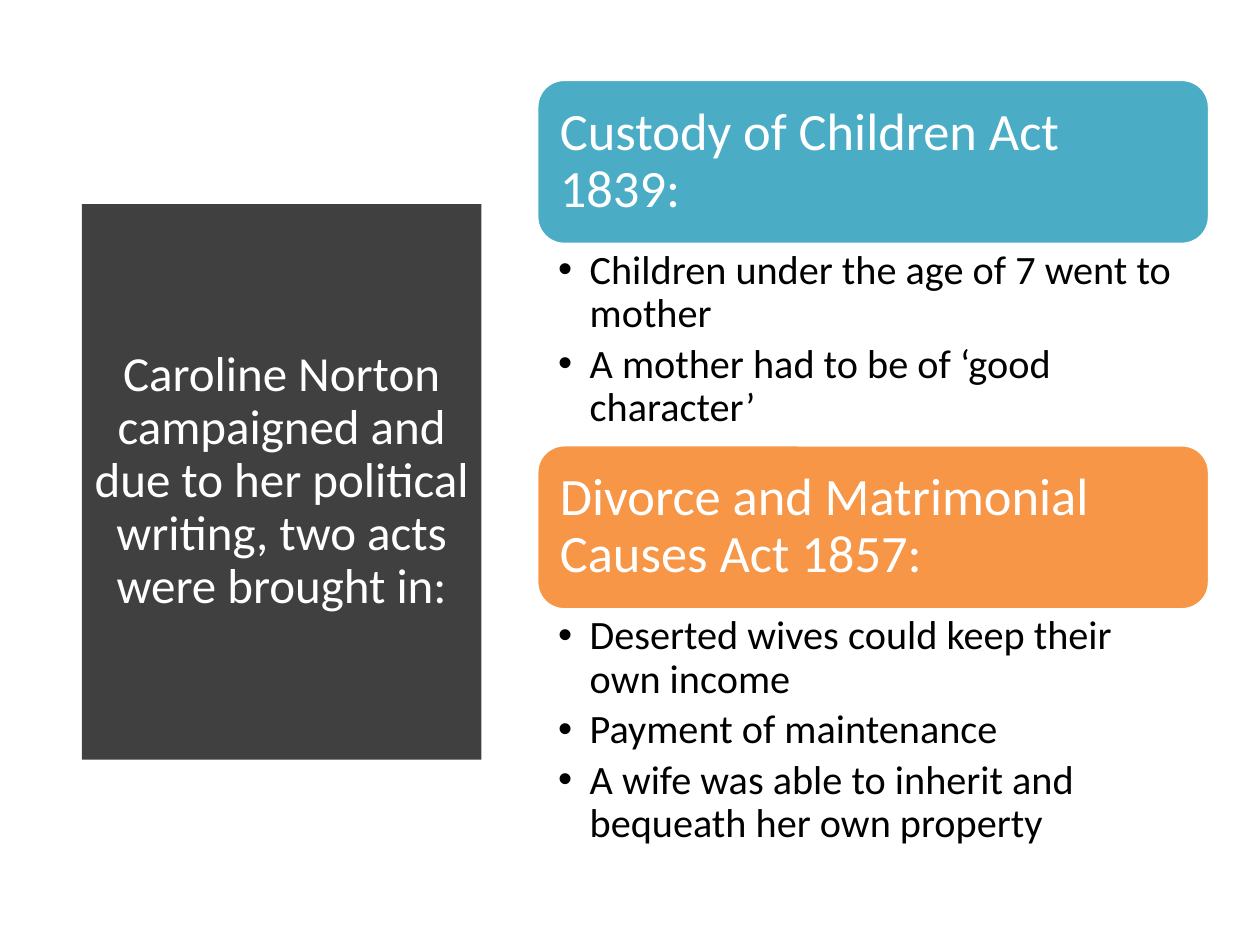
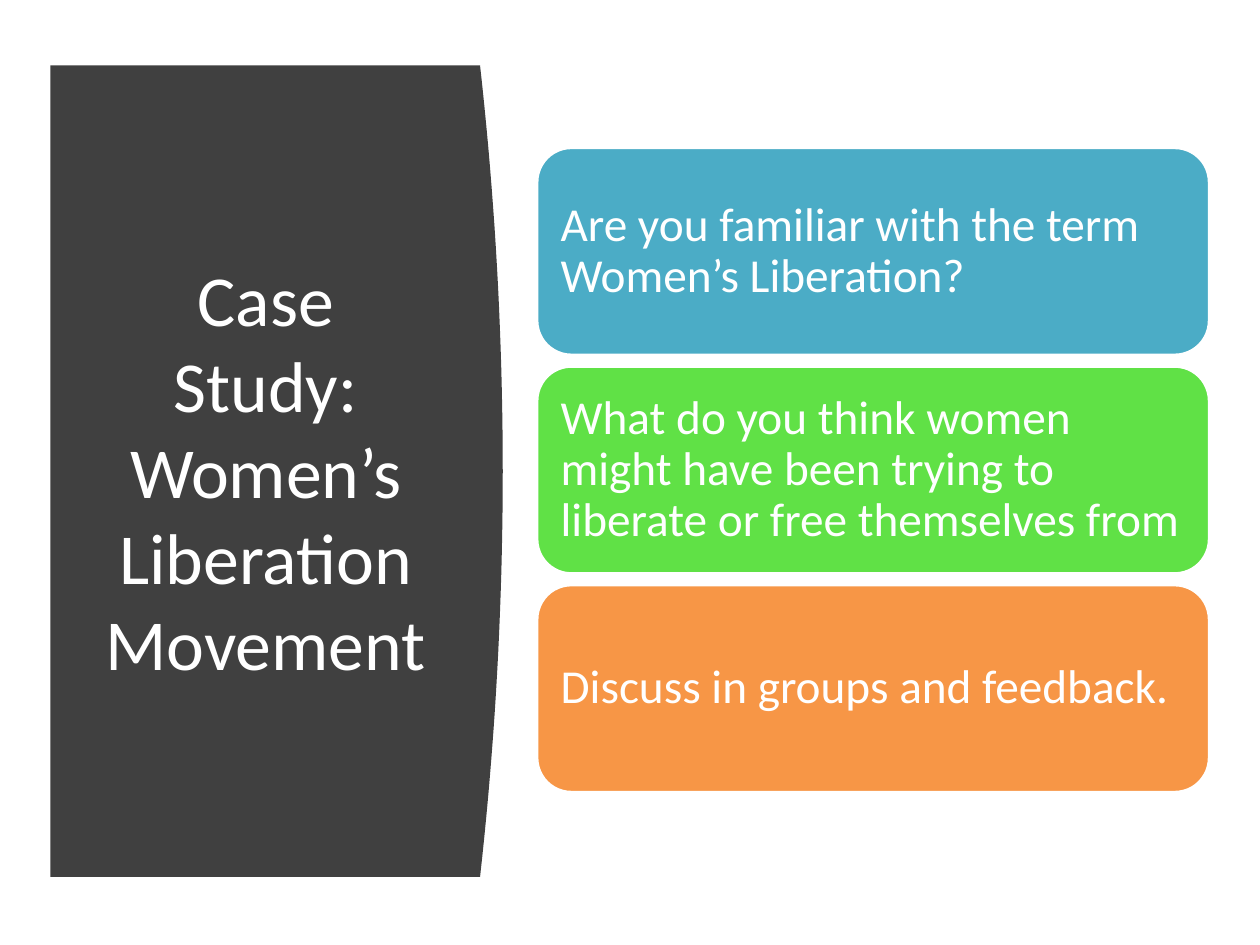
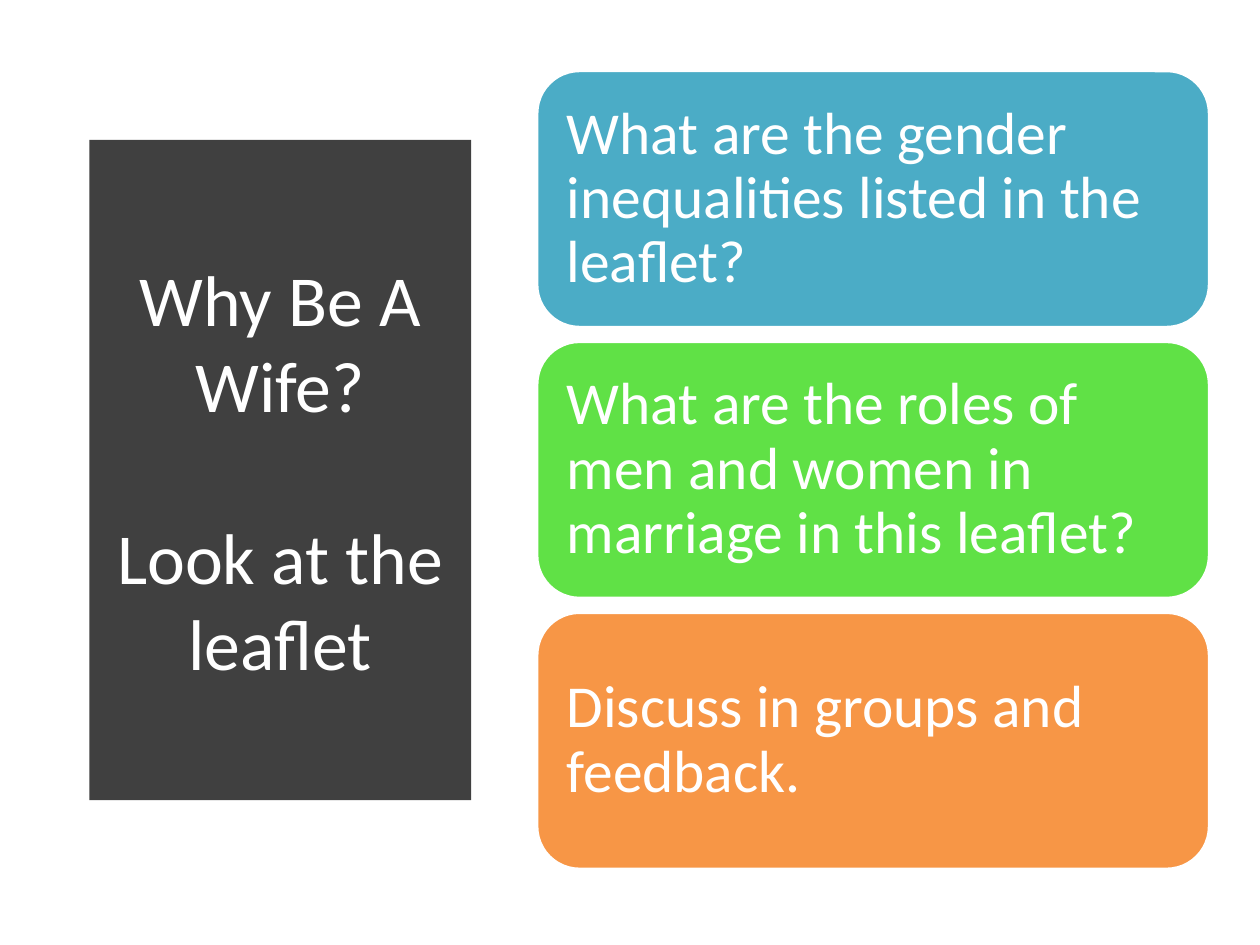
"""Build three slides on women's rights, each with a dark title panel and coloured boxes."""
from pptx import Presentation
from pptx.dml.color import RGBColor
from pptx.enum.shapes import MSO_SHAPE
from pptx.enum.text import MSO_ANCHOR, MSO_AUTO_SIZE, PP_ALIGN
from pptx.util import Inches, Pt

ROUNDED = MSO_SHAPE.ROUNDED_RECTANGLE
TOP, MIDDLE = MSO_ANCHOR.TOP, MSO_ANCHOR.MIDDLE
LEFT, CENTER = PP_ALIGN.LEFT, PP_ALIGN.CENTER
NO_AUTOFIT = MSO_AUTO_SIZE.NONE

FONT = "Calibri"
COLORS = {
    "panel": "404040",
    "blue": "4BACC6",
    "green": "60E146",
    "orange": "F79646",
    "white": "FFFFFF",
    "black": "000000",
}
TITLE_ONLY, TWO_CONTENT = 5, 3
BOX_LEFT, BOX_WIDTH = 4.26, 5.34


def write_text(shape, texts, size, color, alignment, anchor, insets, line_spacing=0.9,
               space_before=0, space_after=0):
    """Fill a shape with evenly formatted paragraphs."""
    frame = shape.text_frame
    frame.text = "\n".join(texts)
    frame.word_wrap = True
    frame.auto_size = NO_AUTOFIT
    frame.vertical_anchor = anchor
    frame.margin_left, frame.margin_top, frame.margin_right, frame.margin_bottom = map(Inches, insets)
    for index, paragraph in enumerate(frame.paragraphs):
        paragraph.alignment = alignment
        paragraph.line_spacing = line_spacing
        paragraph.space_before = Pt(space_before if index else 0)
        paragraph.space_after = Pt(space_after)
        paragraph.font.name = FONT
        paragraph.font.size = Pt(size)
        paragraph.font.color.rgb = RGBColor.from_string(COLORS[color])


def add_box(slide, top, height, color, text, size, inset):
    """Add a rounded box in the right-hand column."""
    box = slide.shapes.add_shape(
        ROUNDED, Inches(BOX_LEFT), Inches(top), Inches(BOX_WIDTH), Inches(height))
    box.shadow.inherit = False
    box.fill.solid()
    box.fill.fore_color.rgb = RGBColor.from_string(COLORS[color])
    box.line.color.rgb = RGBColor.from_string(COLORS["white"])
    box.line.width = Pt(2)
    write_text(box, [text], size, "white", LEFT, MIDDLE, [inset] * 4)


presentation = Presentation()
presentation.slide_width = Inches(10)
presentation.slide_height = Inches(7.5)

slide_designs = [
    {"layout": TWO_CONTENT, "title": ["Caroline Norton campaigned and due to her political writing, "
                                      "two acts were brought in:"],
     "place": (0.65, 1.62, 3.17, 4.41), "size": 28, "spacing": 0.9, "filled": True},
    {"layout": TITLE_ONLY, "title": ["Case Study: Women’s Liberation Movement"],
     "place": (0.71, 1.11, 2.8, 5.24), "size": 41, "spacing": 1.0, "filled": False},
    {"layout": TITLE_ONLY, "title": ["Why Be A Wife?", "Look at the leaflet"],
     "place": (0.71, 1.11, 3.03, 5.24), "size": 41, "spacing": 1.0, "filled": True},
]
slides = []
for design in slide_designs:
    slide = presentation.slides.add_slide(presentation.slide_layouts[design["layout"]])
    title = slide.shapes.title
    title.left, title.top, title.width, title.height = map(Inches, design["place"])
    if design["filled"]:
        title.fill.solid()
        title.fill.fore_color.rgb = RGBColor.from_string(COLORS["panel"])
    write_text(title, design["title"], design["size"], "white", CENTER, MIDDLE,
               (0.1, 0.05, 0.1, 0.05), design["spacing"], space_before=49)
    slides.append(slide)
acts_slide, movement_slide, leaflet_slide = slides

acts = [
    ("Custody of Children Act 1839:", "blue", 0.63, 1.6,
     ["Children under the age of 7 went to mother",
      "A mother had to be of ‘good character’"]),
    ("Divorce and Matrimonial Causes Act 1857:", "orange", 3.53, 2,
     ["Deserted wives could keep their own income",
      "Payment of maintenance",
      "A wife was able to inherit and bequeath her own property"]),
]
heading_height = 1.31
for index, (heading, color, top, list_height, points) in enumerate(acts, start=1):
    add_box(acts_slide, top, heading_height, color, heading, 30, 0.12)
    point_list = acts_slide.placeholders[index]
    point_list.left, point_list.width = Inches(BOX_LEFT), Inches(BOX_WIDTH)
    point_list.top, point_list.height = Inches(top + heading_height), Inches(list_height)
    write_text(point_list, points, 23, "black", LEFT, TOP, (0.17, 0.04, 0.23, 0.04), space_after=4)
    for paragraph in point_list.text_frame.paragraphs:
        properties = paragraph._p.get_or_add_pPr()
        properties.set("marL", str(Inches(0.25)))
        properties.set("indent", str(Inches(-0.25)))

panel_left, panel_right, panel_top, panel_height = 0.4, 3.81, 0.52, 6.44
bulge, steps = 0.18, 40
curve = []
for step in range(steps + 1):
    fraction = step / steps
    curve.append((Inches(panel_right + bulge * 4 * fraction * (1 - fraction)),
                  Inches(panel_top + panel_height * fraction)))
builder = movement_slide.shapes.build_freeform(Inches(panel_left), Inches(panel_top))
builder.add_line_segments(curve + [(Inches(panel_left), Inches(panel_top + panel_height))])
panel = builder.convert_to_shape()
panel.shadow.inherit = False
panel.fill.solid()
panel.fill.fore_color.rgb = RGBColor.from_string(COLORS["panel"])
panel.line.fill.background()
movement_slide.shapes.title.element.addprevious(panel.element)

question_columns = [
    (movement_slide, 1.17, 1.65, 0.085, 27, 0.11,
     ["Are you familiar with the term Women’s Liberation?",
      "What do you think women might have been trying to liberate or free themselves from",
      "Discuss in groups and feedback."]),
    (leaflet_slide, 0.56, 2.04, 0.11, 34, 0.14,
     ["What are the gender inequalities listed in the leaflet?",
      "What are the roles of men and women in marriage in this leaflet?",
      "Discuss in groups and feedback."]),
]
for slide, first_top, height, gap, size, inset, questions in question_columns:
    for index, (question, color) in enumerate(zip(questions, ("blue", "green", "orange"))):
        add_box(slide, first_top + index * (height + gap), height, color, question, size, inset)

presentation.save("out.pptx")
